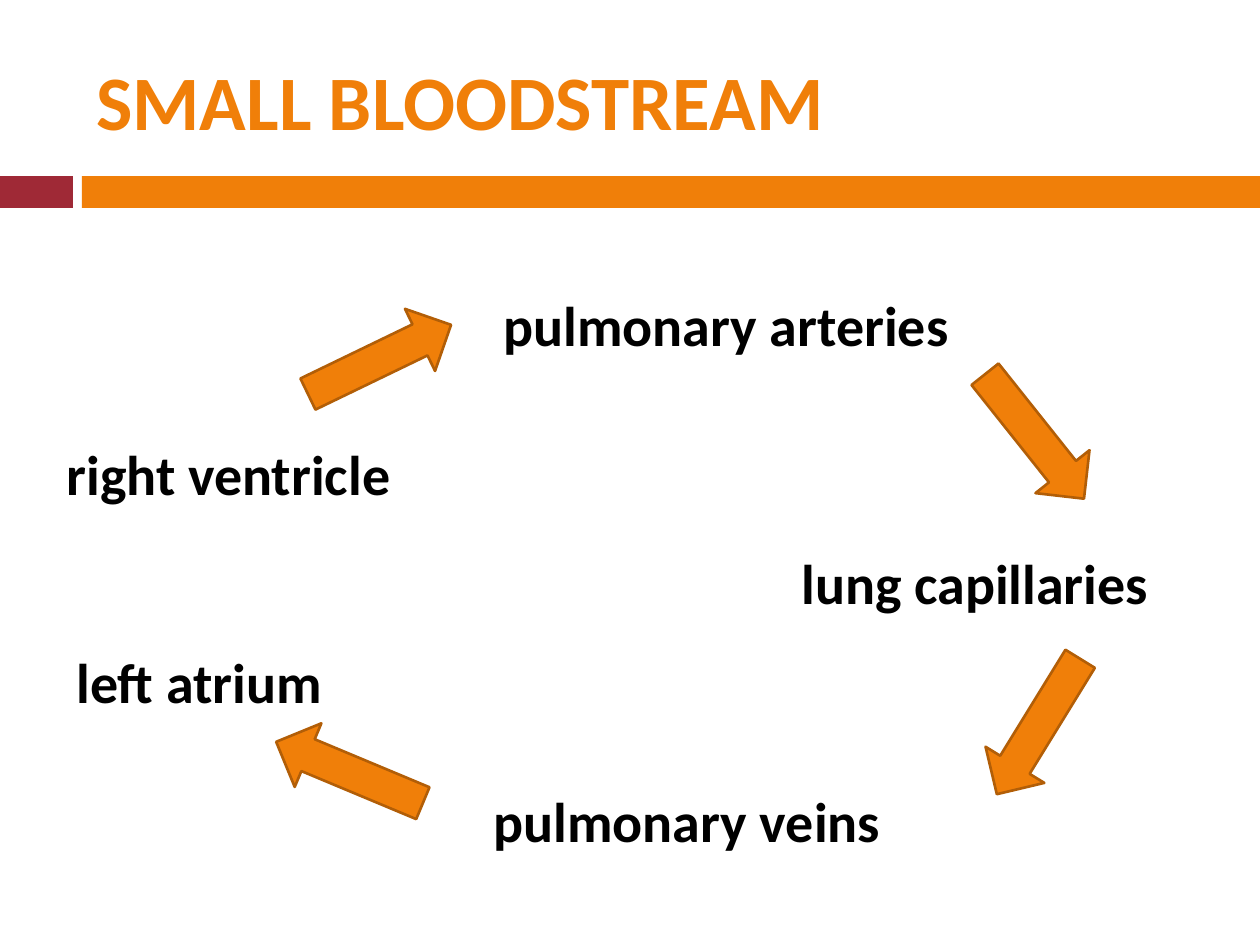
from dataclasses import dataclass

from pptx import Presentation
from pptx.dml.color import RGBColor
from pptx.enum.shapes import MSO_SHAPE
from pptx.enum.text import MSO_ANCHOR, MSO_AUTO_SIZE
from pptx.util import Emu, Pt

RECTANGLE = MSO_SHAPE.RECTANGLE
RIGHT_ARROW = MSO_SHAPE.RIGHT_ARROW
MIDDLE = MSO_ANCHOR.MIDDLE
GROW = MSO_AUTO_SIZE.SHAPE_TO_FIT_TEXT

PX_PER_INCH = 126
SLIDE_SIZE = (1260, 945)
HEADER_BOX = (0, 0, 1260, 208)
CYCLE_BOX = (54, 284, 1171, 577)
LABEL_HEIGHT = 81
ARROW_SIZE = (159, 69)

# Text, left, top, width; in the order of blood flow
STATIONS = [
    ("right ventricle", 0, 149, 398),
    ("pulmonary arteries", 437, 0, 534),
    ("lung capillaries", 735, 258, 436),
    ("pulmonary veins", 427, 496, 474),
    ("left atrium", 10, 357, 299),
]
# Left, top, rotation; each leads from one station to the next
FLOW_ARROWS = [
    (246, 41, 334.2),
    (901, 118, 51.5),
    (905, 408, 121.6),
    (216, 454, 202.7),
]


@dataclass(frozen=True)
class Theme:
    font: str = "Calibri"
    orange: str = "F07F09"
    dark_orange: str = "B25E07"
    crimson: str = "9F2936"
    black: str = "000000"
    title_size: int = 44
    label_size: int = 32
    outline: float = 1.5


THEME = Theme()


def px(length):
    return Emu(round(length * 914400 / PX_PER_INCH))


def color(value):
    return RGBColor.from_string(value)


def add_filled_shape(slide, kind, box, fill, line=None):
    shape = slide.shapes.add_shape(kind, *map(px, box))
    shape.shadow.inherit = False
    shape.fill.solid()
    shape.fill.fore_color.rgb = color(fill)
    if line:
        shape.line.color.rgb = color(line)
        shape.line.width = Pt(THEME.outline)
    else:
        shape.line.fill.background()
    return shape


def add_bold_text(slide, box, text, size, text_color):
    frame = slide.shapes.add_textbox(*map(px, box)).text_frame
    run = frame.paragraphs[0].add_run()
    run.text = text
    run.font.name = THEME.font
    run.font.size = Pt(size)
    run.font.bold = True
    run.font.color.rgb = color(text_color)
    return frame


def add_header(slide, box):
    """Title above a bar split into a short and a long block."""
    left, top, width, height = box
    bar_height, short_width, long_start = 32, 73, 82
    bar_top = top + height - bar_height
    add_filled_shape(slide, RECTANGLE, (left, bar_top, short_width, bar_height), THEME.crimson)
    add_filled_shape(
        slide, RECTANGLE,
        (left + long_start, bar_top, width - long_start, bar_height), THEME.orange,
    )
    title = add_bold_text(
        slide, (left + 84, top + 32, 1124, 136),
        "SMALL BLOODSTREAM", THEME.title_size, THEME.orange,
    )
    title.word_wrap = True
    title.vertical_anchor = MIDDLE


def add_cycle(slide, box):
    """Stations of the circulation, joined by turned block arrows."""
    left, top = box[:2]
    for text, x, y, width in STATIONS:
        label = add_bold_text(
            slide, (left + x, top + y, width, LABEL_HEIGHT),
            text, THEME.label_size, THEME.black,
        )
        label.word_wrap = False
        label.auto_size = GROW
    for x, y, rotation in FLOW_ARROWS:
        arrow = add_filled_shape(
            slide, RIGHT_ARROW, (left + x, top + y, *ARROW_SIZE),
            THEME.orange, THEME.dark_orange,
        )
        arrow.rotation = rotation


def main():
    presentation = Presentation()
    presentation.slide_width, presentation.slide_height = map(px, SLIDE_SIZE)
    slide = presentation.slides.add_slide(presentation.slide_layouts[6])
    add_header(slide, HEADER_BOX)
    add_cycle(slide, CYCLE_BOX)
    presentation.save("out.pptx")


if __name__ == "__main__":
    main()
